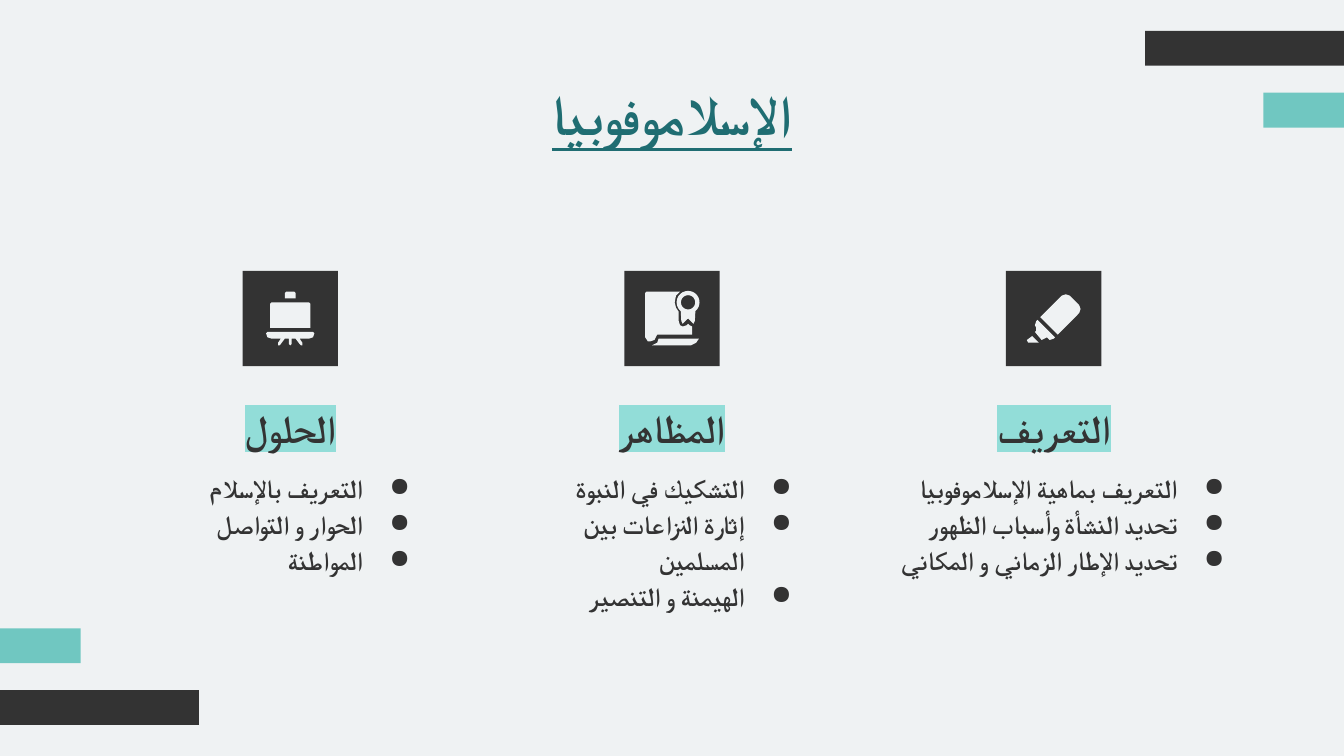
import math
from dataclasses import dataclass

from lxml import etree
from pptx import Presentation
from pptx.dml.color import RGBColor
from pptx.enum.shapes import MSO_SHAPE
from pptx.enum.text import MSO_ANCHOR, PP_ALIGN
from pptx.oxml.ns import qn
from pptx.util import Inches, Pt

RECTANGLE = MSO_SHAPE.RECTANGLE
TOP, BOTTOM = MSO_ANCHOR.TOP, MSO_ANCHOR.BOTTOM
CENTER, RIGHT = PP_ALIGN.CENTER, PP_ALIGN.RIGHT

Point = tuple[float, float]
Outline = list[list[Point]]  # contours of one icon part


@dataclass(frozen=True)
class Theme:
    paper: str = "EFF2F3"
    ink: str = "333333"
    teal: str = "70C7C1"
    title: str = "1F6D72"
    highlight: str = "92DDD8"
    heading_font: str = "Lato"
    body_font: str = "Manrope"
    title_size: int = 30
    heading_size: int = 21
    body_size: int = 14
    line_spacing: float = 1.15


@dataclass(frozen=True)
class Topic:
    heading: str
    points: list[str]
    icon: list[Outline]
    list_width: float = 2.28
    list_shift: float = 0


THEME = Theme()
WIDTH, HEIGHT = 10, 5.625
MIDDLE = WIDTH / 2
PITCH = 2.84  # distance between column centres
TILE, TILE_CENTER = 0.71, 2.37
HEADING_WIDTH = 2.28
BAR_HEIGHT = 0.26


def arc(cx: float, cy: float, radius: float, start: int, end: int) -> list[Point]:
    return [(cx + radius * math.cos(math.radians(a)), cy + radius * math.sin(math.radians(a)))
            for a in range(start, end + 1, 10)]


# Icon outlines, in hundredths of an inch from the tile centre
EASEL = [
    [[(-14, -12), (-15, -11), (-15, 7), (15, 7), (15, -11), (14, -12)]],
    [[(-17, 10), (-18, 11), (-17, 14), (-14, 15), (-7, 15), (-9, 18), (-9, 20), (-8, 20),
      (-7, 19), (-4, 15), (-1, 15), (-1, 19), (0, 20), (1, 19), (1, 15), (4, 15), (7, 19),
      (8, 20), (9, 20), (9, 18), (7, 15), (14, 15), (17, 14), (18, 11), (17, 10)]],
    [[(-3, -20), (-4, -19), (-4, -15), (4, -15), (4, -19), (3, -20)]],
]
DIPLOMA = [
    [arc(12, -12, 8.5, 130, 410)
     + [(17, 2), (16, 4), (15, 3), (12, 0), (9, 3), (8, 4), (7, 2)],
     arc(12, -12, 5.3, 0, 350)],
    [[(-10, 15), (-11, 18), (-15, 20), (14, 20), (18, 18), (20, 15)]],
    [[(-19, -20), (-20, -19), (-20, 14), (-18, 17), (-16, 17), (-13, 16), (-12, 14),
      (-11, 12), (15, 12), (15, 6), (13, 5), (12, 4), (11, 5), (8, 6), (6, 5), (5, 2),
      (5, -5), (3, -8), (2, -12), (3, -17), (6, -20)]],
]
MARKER = [
    [[(9, -18), (6, -17), (-10, -1), (3, 12), (19, -4), (20, -7), (19, -10), (12, -17)]],
    [[(-12, 1), (-13, 2), (-14, 5), (-13, 7), (-13, 9), (-14, 10), (-9, 16), (-7, 15),
      (-5, 14), (-3, 16), (0, 15), (1, 14)]],
    [[(-16, 13), (-20, 16), (-19, 18), (-12, 18), (-11, 18)]],
]

TOPICS = [
    Topic("الحلول", ["التعريف بالإسلام", "الحوار و التواصل", "المواطنة"], EASEL),
    Topic("المظاهر",
          ["التشكيك في النبوة", "إثارة النزاعات بين المسلمين", "الهيمنة و التنصير"], DIPLOMA),
    Topic("التعريف",
          ["التعريف بماهية الإسلاموفوبيا", "تحديد النشأة وأسباب الظهور",
           "تحديد الإطار الزماني و المكاني"], MARKER, list_width=2.78, list_shift=0.13),
]


def paint(shape, color: str) -> None:
    shape.shadow.inherit = False
    shape.fill.solid()
    shape.fill.fore_color.rgb = RGBColor.from_string(color)
    shape.line.fill.background()


def add_block(slide, left: float, top: float, width: float, height: float, color: str) -> None:
    paint(slide.shapes.add_shape(RECTANGLE, *map(Inches, (left, top, width, height))), color)


def add_icon(slide, center: float, icon: list[Outline]) -> None:
    for outline in icon:
        contours = [[(Inches(center + x / 100), Inches(TILE_CENTER + y / 100))
                     for x, y in contour] for contour in outline]
        builder = slide.shapes.build_freeform(*contours[0][0], scale=1.0)
        builder.add_line_segments(contours[0][1:], close=True)
        for hole in contours[1:]:
            builder.move_to(*hole[0])
            builder.add_line_segments(hole[1:], close=True)
        paint(builder.convert_to_shape(), THEME.paper)


def add_text(slide, center: float, top: float, width: float, height: float, lines: list[str],
             size: int, font: str, color: str, align=CENTER, anchor=TOP, spacing: float = 1,
             bullets: bool = False, underline: bool = False, highlight: str = "") -> None:
    box = slide.shapes.add_textbox(*map(Inches, (center - width / 2, top, width, height)))
    frame = box.text_frame
    frame.word_wrap = True
    frame.vertical_anchor = anchor
    frame.margin_left = frame.margin_right = Inches(0.1)
    frame.margin_top = frame.margin_bottom = Inches(0.1)
    frame.text = "\n".join(lines)
    for paragraph in frame.paragraphs:
        paragraph.alignment = align
        paragraph.line_spacing = spacing
        properties = paragraph._p.get_or_add_pPr()
        properties.set("rtl", "1")
        if bullets:
            properties.set("marL", str(Inches(0.5)))
            properties.set("indent", str(Inches(-0.35)))
            bullet_color = etree.SubElement(properties, qn("a:buClr"))
            etree.SubElement(bullet_color, qn("a:srgbClr"), val=color)
            etree.SubElement(properties, qn("a:buChar"), char="●")
        for run in paragraph.runs:
            run.font.size = Pt(size)
            run.font.bold = True
            run.font.underline = underline
            run.font.color.rgb = RGBColor.from_string(color)
            run_properties = run._r.get_or_add_rPr()
            if highlight:
                mark = etree.SubElement(run_properties, qn("a:highlight"))
                etree.SubElement(mark, qn("a:srgbClr"), val=highlight)
            run.font.name = font
            etree.SubElement(run_properties, qn("a:cs"), typeface=font)


def add_corner_bars(slide) -> None:
    """Two bars at the top right, turned half round for the bottom left."""
    for top, width, color in ((0.23, 1.48, THEME.ink), (0.69, 0.6, THEME.teal)):
        add_block(slide, WIDTH - width, top, width, BAR_HEIGHT, color)
        add_block(slide, 0, HEIGHT - top - BAR_HEIGHT, width, BAR_HEIGHT, color)


def add_topic(slide, center: float, topic: Topic) -> None:
    add_block(slide, center - TILE / 2, TILE_CENTER - TILE / 2, TILE, TILE, THEME.ink)
    add_icon(slide, center, topic.icon)
    add_text(slide, center, 2.89, HEADING_WIDTH, 0.57, [topic.heading], THEME.heading_size,
             THEME.heading_font, THEME.ink, anchor=BOTTOM, spacing=THEME.line_spacing,
             highlight=THEME.highlight)
    add_text(slide, center + topic.list_shift, 3.38, topic.list_width, 1.22, topic.points,
             THEME.body_size, THEME.body_font, THEME.ink, align=RIGHT,
             spacing=THEME.line_spacing, bullets=True)


def main() -> None:
    deck = Presentation()
    deck.slide_width, deck.slide_height = Inches(WIDTH), Inches(HEIGHT)
    slide = deck.slides.add_slide(deck.slide_layouts[6])
    slide.background.fill.solid()
    slide.background.fill.fore_color.rgb = RGBColor.from_string(THEME.paper)

    # Frame and title
    add_corner_bars(slide)
    add_text(slide, MIDDLE, 0.49, 8.43, 0.63, ["الإسلاموفوبيا"], THEME.title_size,
             THEME.heading_font, THEME.title, underline=True)

    # Three topic columns
    for column, topic in enumerate(TOPICS):
        add_topic(slide, MIDDLE + (column - 1) * PITCH, topic)

    deck.save("out.pptx")


if __name__ == "__main__":
    main()
